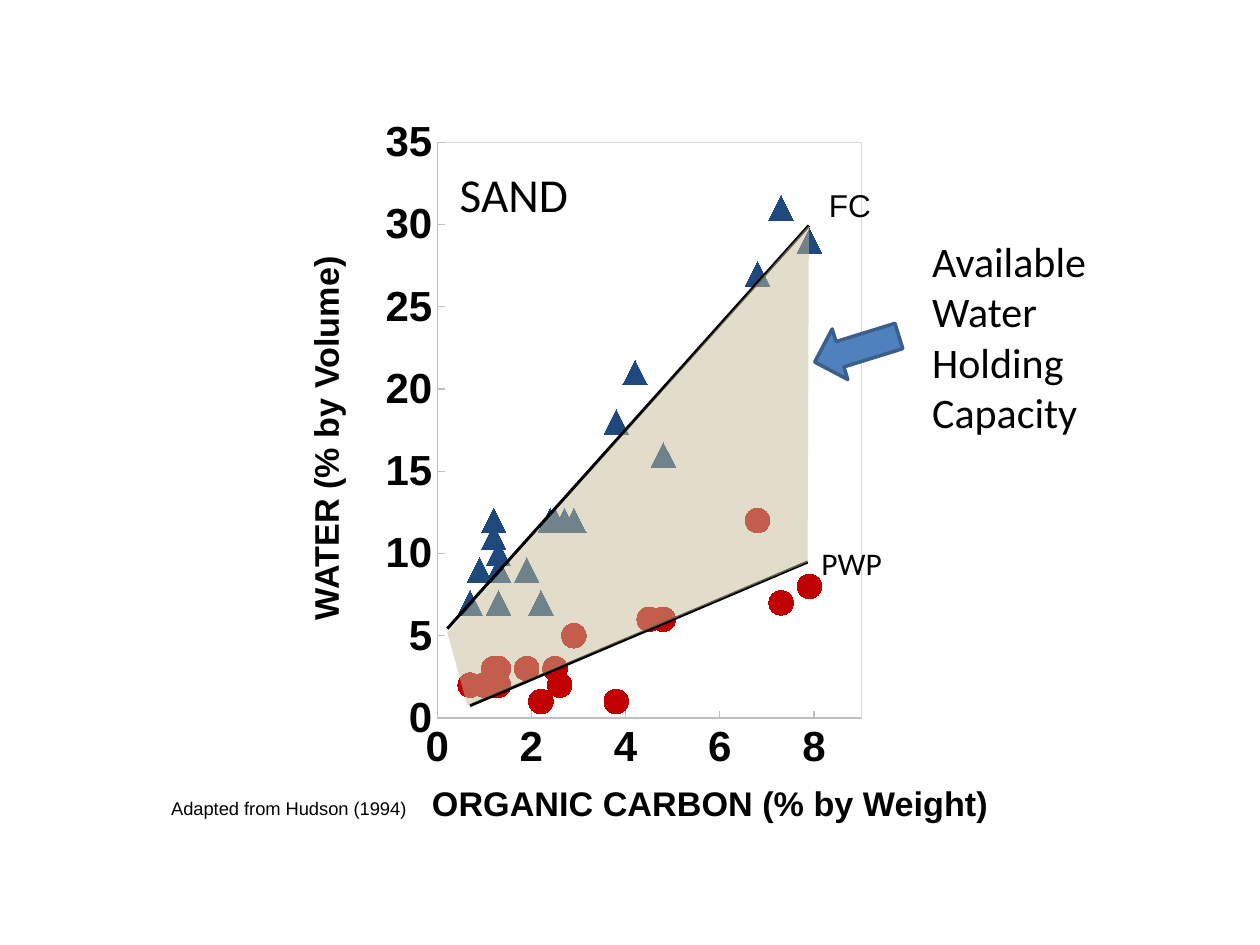
from dataclasses import dataclass

from lxml import etree
from pptx import Presentation
from pptx.chart.data import XyChartData
from pptx.dml.color import RGBColor
from pptx.enum.chart import XL_CHART_TYPE, XL_MARKER_STYLE, XL_TICK_MARK
from pptx.enum.shapes import MSO_CONNECTOR, MSO_SHAPE
from pptx.oxml import parse_xml
from pptx.oxml.ns import nsdecls, qn
from pptx.util import Inches, Pt

SCATTER = XL_CHART_TYPE.XY_SCATTER
TRI, DOT = XL_MARKER_STYLE.TRIANGLE, XL_MARKER_STYLE.CIRCLE
TICK_IN, NO_TICK = XL_TICK_MARK.INSIDE, XL_TICK_MARK.NONE
STRAIGHT, DOWN = MSO_CONNECTOR.STRAIGHT, MSO_SHAPE.DOWN_ARROW
WIDE, HIGH = Inches(10), Inches(7.5)
HUES = {
    "ink": "000000", "paper": "FFFFFF", "axis": "BFBFBF", "frame": "D9D9D9",
    "field": "1F497D", "wilt": "C00000", "band": "C4BD97",
    "arrow": "4F81BD", "edge": "3A5F8C",
}


@dataclass
class Label:
    text: str
    box: tuple[float, float, float, float]
    size: float
    font: str = "Arial"
    bold: bool = False
    wrap: bool = True
    turn: float = 0


@dataclass
class Group:
    name: str
    hue: str
    mark: XL_MARKER_STYLE
    dots: list[tuple[float, float]]


LABELS = [
    Label("WATER (% by Volume)", (10.3, 43.33, 31.1, 5.73), 19.5,
          bold=True, wrap=False, turn=270),
    Label("ORGANIC CARBON (% by Weight)", (33.3, 82.13, 46.5, 5.73), 19.5,
          bold=True, wrap=False),
    Label("Adapted from Hudson (1994)", (12.6, 83.73, 21.1, 3.73), 10.5,
          wrap=False),
    Label("PWP", (64.2, 56.93, 8.8, 5.07), 18, "Calibri"),
    Label("SAND", (35.5, 16.8, 12.8, 7.47), 27, "Calibri"),
    Label("Available Water Holding Capacity", (73, 24.27, 20.6, 22.93), 24,
          "Calibri"),
    Label("FC", (64.8, 19.07, 6.9, 4.93), 18),
]
GROUPS = [
    Group("Series 1", "field", TRI, [
        (0.7, 7), (1.3, 7), (2.2, 7), (0.9, 9), (1.3, 9),
        (1.3, 10), (1.9, 9), (1.9, 9), (1.2, 11), (1.2, 12),
        (2.5, 12), (2.4, 12), (2.7, 12), (2.9, 12), (4.8, 16),
        (3.8, 18), (4.2, 21), (6.8, 27), (7.9, 29), (7.3, 31)]),
    Group("Series 2", "wilt", DOT, [
        (0.7, 2), (1, 2), (1.3, 2), (1.2, 2), (1.3, 3),
        (1.2, 3), (1.9, 3), (1.9, 3), (2.2, 1), (2.6, 2),
        (2.5, 3), (2.5, 3), (2.9, 5), (3.8, 1), (4.5, 6),
        (4.8, 6), (7.3, 7), (7.9, 8), (6.8, 12)]),
]
TRENDS = [((35.5, 66.53), (64.2, 23.87)), ((37.3, 74.67), (64.1, 59.47))]
BAND = [(64.2, 23.87), (64.1, 59.47), (37.1, 74.67), (35.5, 66.93)]
PLOT = {"x": 0.138, "y": 0.036, "w": 0.829, "h": 0.869}


def hue(key: str) -> RGBColor:
    return RGBColor.from_string(HUES[key])


def spot(x: float, y: float) -> tuple[int, int]:
    return round(WIDE * x / 100), round(HIGH * y / 100)


def area(box: tuple[float, float, float, float]) -> tuple[int, ...]:
    return spot(*box[:2]) + spot(*box[2:])


def paint(shape, key: str) -> None:
    shape.shadow.inherit = False
    shape.fill.solid()
    shape.fill.fore_color.rgb = hue(key)


def style_axis(axis, top: float, step: float) -> None:
    axis.minimum_scale, axis.maximum_scale = 0, top
    axis.major_unit = step
    axis.has_major_gridlines = False
    axis.has_title = False
    axis.major_tick_mark, axis.minor_tick_mark = TICK_IN, NO_TICK
    axis.format.line.color.rgb = hue("axis")
    axis.format.line.width = Pt(0.75)
    font = axis.tick_labels.font
    font.name, font.size, font.bold = "Arial", Pt(24), True
    font.color.rgb = hue("ink")


def frame_plot(chart) -> None:
    plot = chart._chartSpace.chart.plotArea
    for old in plot.findall(qn("c:layout")):
        plot.remove(old)
    modes = "".join(f'<c:{k}Mode val="edge"/>' for k in "xy")
    sizes = "".join(f'<c:{k} val="{v}"/>' for k, v in PLOT.items())
    plot.insert(0, parse_xml(
        f'<c:layout {nsdecls("c")}><c:manualLayout>'
        f'<c:layoutTarget val="inner"/>{modes}{sizes}'
        '</c:manualLayout></c:layout>'))
    plot.append(parse_xml(
        f'<c:spPr {nsdecls("c", "a")}><a:solidFill>'
        f'<a:srgbClr val="{HUES["paper"]}"/></a:solidFill>'
        f'<a:ln w="9525"><a:solidFill><a:srgbClr val="{HUES["frame"]}"/>'
        '</a:solidFill></a:ln></c:spPr>'))


def add_plot(slide) -> None:
    data = XyChartData()
    for group in GROUPS:
        row = data.add_series(group.name)
        for x, y in group.dots:
            row.add_data_point(x, y)
    box = area((29.1, 12.53, 40.6, 70.13))
    chart = slide.shapes.add_chart(SCATTER, *box, data).chart
    chart.has_legend = chart.has_title = False
    chart.font.name, chart.font.size = "Arial", Pt(10)
    chart.font.color.rgb = hue("ink")
    chart.plots[0].vary_by_categories = False
    style_axis(chart.category_axis, 9, 2)
    style_axis(chart.value_axis, 35, 5)
    for group, row in zip(GROUPS, chart.plots[0].series):
        row.format.line.fill.background()
        row.smooth = False
        mark = row.marker
        mark.style, mark.size = group.mark, 14
        mark.format.fill.solid()
        mark.format.fill.fore_color.rgb = hue(group.hue)
        mark.format.line.fill.background()
    frame_plot(chart)


def add_trend(slide, start: tuple, end: tuple) -> None:
    line = slide.shapes.add_connector(STRAIGHT, *spot(*start), *spot(*end))
    line.line.color.rgb = hue("ink")
    line.line.width = Pt(1.75)
    etree.SubElement(line._element.spPr, qn("a:effectLst"))


def add_band(slide) -> None:
    first, *rest = [spot(*p) for p in BAND]
    form = slide.shapes.build_freeform(*first)
    form.add_line_segments(rest, close=True)
    band = form.convert_to_shape()
    paint(band, "band")
    band.line.fill.background()
    tone = band._element.spPr.find(".//" + qn("a:srgbClr"))
    etree.SubElement(tone, qn("a:alpha")).set("val", "50000")


def add_arrow(slide) -> None:
    arrow = slide.shapes.add_shape(DOWN, *area((65.9, 32.27, 4.2, 9.33)))
    paint(arrow, "arrow")
    arrow.rotation = 72.8
    arrow.line.color.rgb = hue("edge")
    arrow.line.width = Pt(2)


def add_label(slide, label: Label) -> None:
    box = slide.shapes.add_textbox(*area(label.box))
    box.rotation = label.turn
    box.text_frame.word_wrap = label.wrap
    para = box.text_frame.paragraphs[0]
    para.text = label.text
    font = para.font
    font.name, font.size, font.bold = label.font, Pt(label.size), label.bold
    font.color.rgb = hue("ink")


def main() -> None:
    deck = Presentation()
    deck.slide_width, deck.slide_height = WIDE, HIGH
    slide = deck.slides.add_slide(deck.slide_layouts[6])
    add_plot(slide)
    for start, end in TRENDS:
        add_trend(slide, start, end)
    add_band(slide)
    add_arrow(slide)
    for label in LABELS:
        add_label(slide, label)
    deck.save("out.pptx")


if __name__ == "__main__":
    main()
